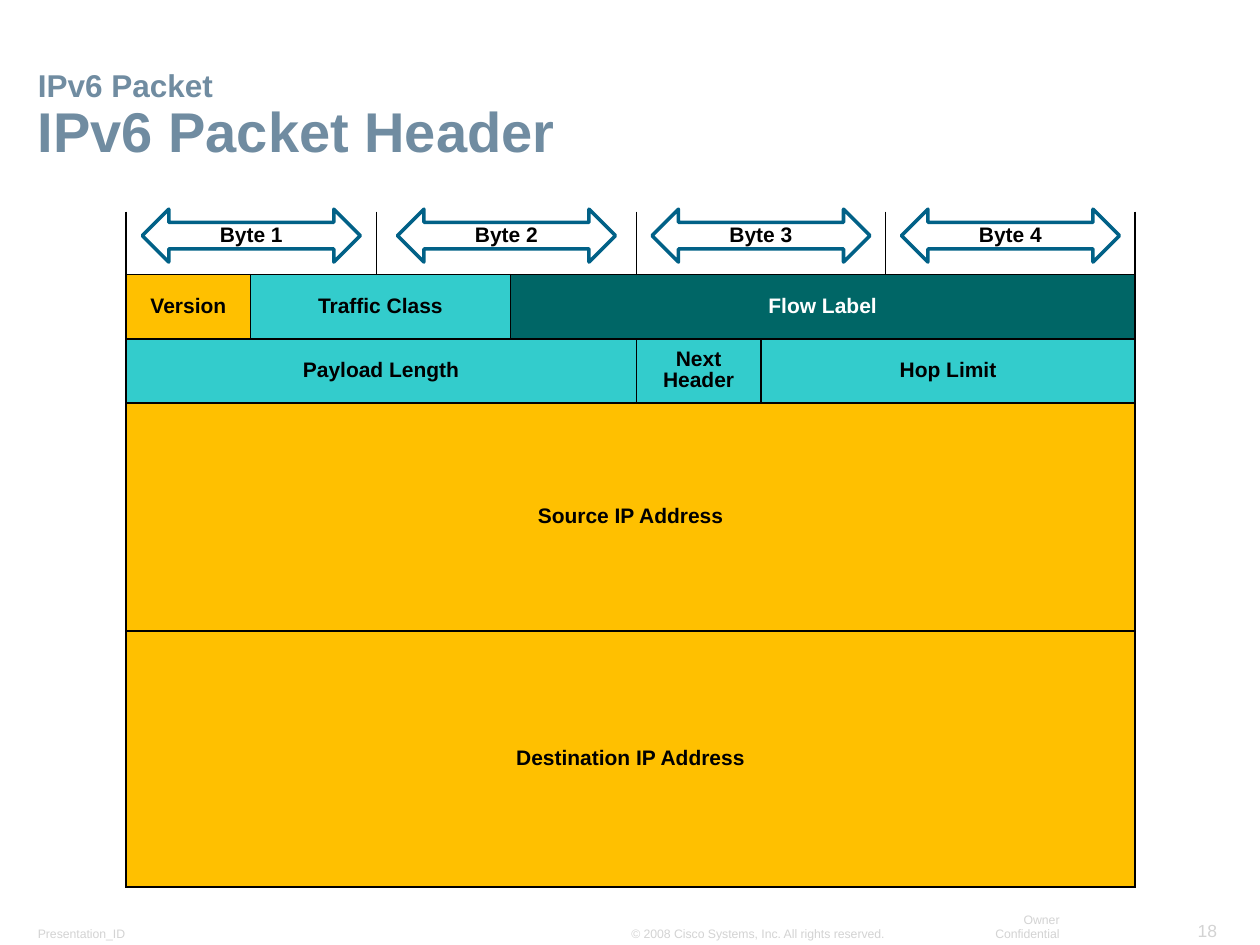
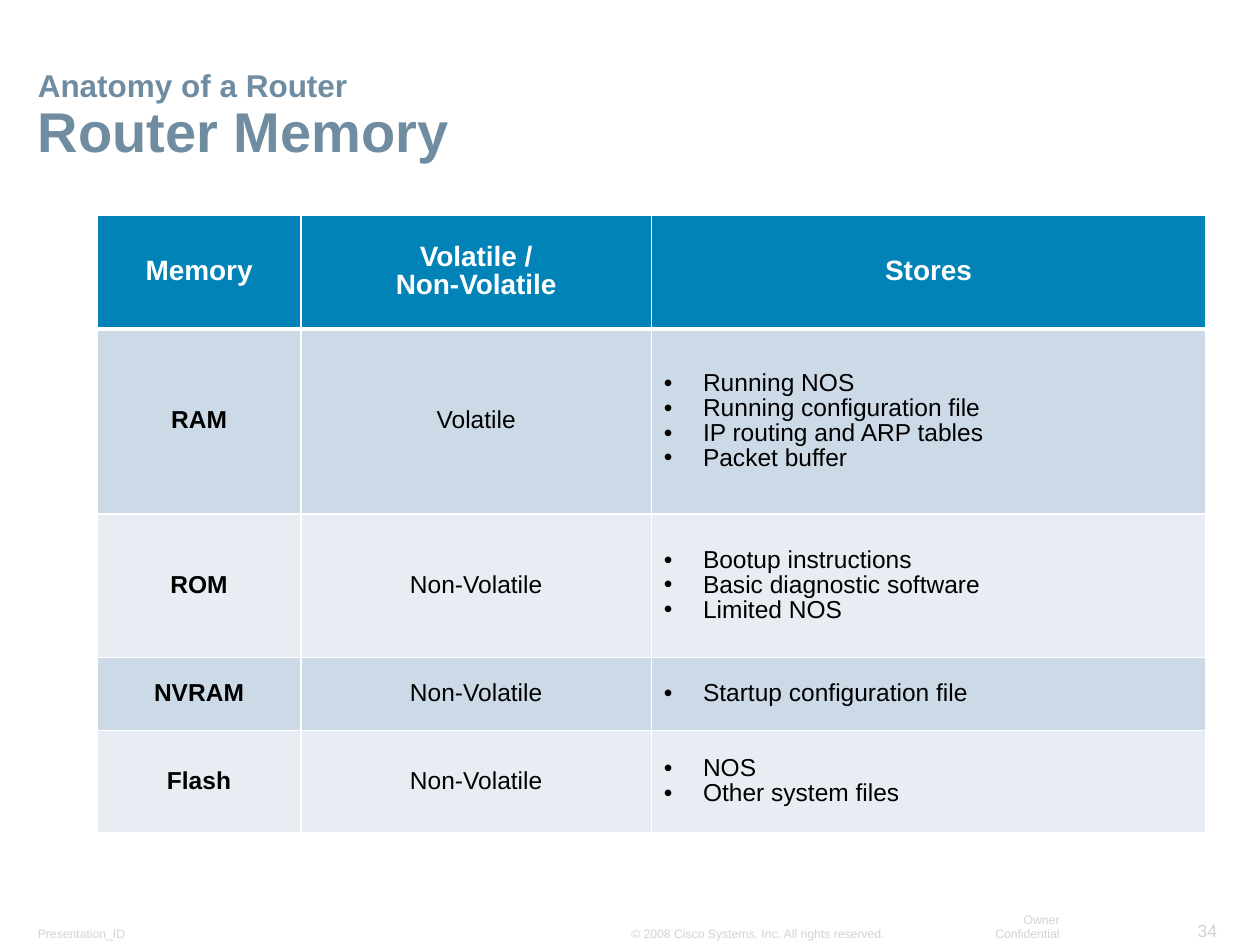
"""Build two router lesson slides: the IPv6 packet header and router memory."""
from copy import deepcopy
from itertools import accumulate

from lxml.etree import SubElement
from pptx import Presentation
from pptx.dml.color import RGBColor as RGB
from pptx.enum.shapes import MSO_SHAPE as SHAPE
from pptx.enum.text import MSO_ANCHOR as ANCHOR, MSO_AUTO_SIZE as AUTO_SIZE, PP_ALIGN as ALIGN
from pptx.oxml.ns import qn
from pptx.util import Inches, Pt

COLORS = {
    "title": "708CA1", "footer": "D3D3D3", "black": "000000", "white": "FFFFFF",
    "arrow": "016187", "amber": "FFC000", "aqua": "33CCCC", "teal": "006666",
    "header": "0183B7", "dark band": "CCD9E6", "light band": "E7EDF3",
}
TITLES = [("IPv6 Packet", "IPv6 Packet Header", "18"),
          ("Anatomy of a Router", "Router Memory", "34")]
FOOTERS = [
    ("Presentation_ID", 0.21, 7.3, 1.05, 0.21, 7, ALIGN.LEFT),
    ("© 2008 Cisco Systems, Inc. All rights reserved.", 4.92, 7.3, 2.21, 0.21, 7, ALIGN.LEFT),
    ("Owner Confidential", 7.54, 7.3, 0.96, 0.21, 7, ALIGN.RIGHT),
]


def write(frame, lines, size, color, bold=False, align=ALIGN.CENTER, spacing=0.9, bullet=None):
    for index, line in enumerate(lines):
        paragraph = frame.paragraphs[0] if index == 0 else frame.add_paragraph()
        if bullet:
            properties = paragraph._p.get_or_add_pPr()
            properties.set("marL", str(Inches(0.31)))
            properties.set("indent", str(-Inches(0.31)))
            SubElement(properties, qn("a:buFont")).set("typeface", "Arial")
            SubElement(properties, qn("a:buChar")).set("char", bullet)
        paragraph.alignment = align
        paragraph.line_spacing = spacing
        run = paragraph.add_run()
        run.text = line
        for name, value in {"name": "Arial", "size": Pt(size), "bold": bold}.items():
            setattr(run.font, name, value)
        run.font.color.rgb = RGB.from_string(COLORS[color])


def style_cell(cell, fill, border, widths):
    cell.vertical_anchor = ANCHOR.MIDDLE
    if fill:
        cell.fill.solid()
        cell.fill.fore_color.rgb = RGB.from_string(COLORS[fill])
    else:
        cell.fill.background()
    properties = cell._tc.get_or_add_tcPr()
    for index, (side, width) in enumerate(zip("LRTB", widths)):
        line = SubElement(properties, qn(f"a:ln{side}"), w=str(Pt(width)))
        if width:
            paint = SubElement(line, qn("a:solidFill"))
            SubElement(paint, qn("a:srgbClr"), val=COLORS[border])
        else:
            SubElement(line, qn("a:noFill"))
        properties.insert(index, line)


presentation = Presentation()
presentation.slide_width = Inches(10)
presentation.slide_height = Inches(7.5)

slides = []
for topic, heading, number in TITLES:
    slide = presentation.slides.add_slide(presentation.slide_layouts[5])
    slides.append(slide)
    title = slide.shapes.title
    title_format = {"left": 0.21, "top": 0.43, "width": 9.59, "height": 0.92}
    for name, value in title_format.items():
        setattr(title, name, Inches(value))
    frame = title.text_frame
    frame.auto_size = AUTO_SIZE.NONE
    frame.vertical_anchor = ANCHOR.BOTTOM
    frame.margin_left = frame.margin_right = Inches(0.09)
    frame.margin_top = frame.margin_bottom = Inches(0.04)
    write(frame, [topic], 18, "title", True, ALIGN.LEFT)
    paragraph = frame.paragraphs[0]
    topic_run = paragraph.runs[0]
    paragraph.add_line_break()
    paragraph._p[-1].append(deepcopy(topic_run._r.rPr))
    heading_run = paragraph.add_run()
    heading_run.text = heading
    heading_run._r.insert(0, deepcopy(topic_run._r.rPr))
    heading_run.font.size = Pt(32)

    page_number = (number, 9.4, 7.25, 0.35, 0.26, 10, ALIGN.RIGHT)
    for text, left, top, width, height, size, align in FOOTERS + [page_number]:
        box = slide.shapes.add_textbox(*map(Inches, (left, top, width, height)))
        frame = box.text_frame
        frame.word_wrap = False
        frame.vertical_anchor = ANCHOR.BOTTOM
        frame.margin_left = frame.margin_right = Inches(0.09)
        frame.margin_top = frame.margin_bottom = Inches(0.04)
        write(frame, [text], size, "footer", align=align, spacing=1.0)

packet_slide, memory_slide = slides

packet_columns = [0.99, 1, 1.06, 1, 0.99, 0.99, 1.98]
packet_rows = [0.5, 0.51, 0.51, 1.81, 2.03]
packet_fields = [
    [("", None, 2), ("", None, 2), ("", None, 2), ("", None, 1)],
    [("Version", "amber", 1), ("Traffic Class", "aqua", 2), ("Flow Label", "teal", 4)],
    [("Payload Length", "aqua", 4), ("Next Header", "aqua", 1), ("Hop Limit", "aqua", 2)],
    [("Source IP Address", "amber", 7)],
    [("Destination IP Address", "amber", 7)],
]
packet_table = packet_slide.shapes.add_table(
    5, 7, Inches(1), Inches(1.68), Inches(sum(packet_columns)), Inches(sum(packet_rows))).table

memory_columns = [1.62, 2.78, 4.4]
memory_rows = [0.9, 1.47, 1.14, 0.58, 0.81]
memory_kinds = [
    ("RAM", "Volatile", ["Running NOS", "Running configuration file",
                         "IP routing and ARP tables", "Packet buffer"]),
    ("ROM", "Non-Volatile", ["Bootup instructions", "Basic diagnostic software", "Limited NOS"]),
    ("NVRAM", "Non-Volatile", ["Startup configuration file"]),
    ("Flash", "Non-Volatile", ["NOS", "Other system files"]),
]
memory_table = memory_slide.shapes.add_table(
    5, 3, Inches(0.77), Inches(1.71), Inches(sum(memory_columns)), Inches(sum(memory_rows))).table

for table, columns, rows in [(packet_table, packet_columns, packet_rows),
                             (memory_table, memory_columns, memory_rows)]:
    table.first_row = table.horz_banding = False
    for column, width in zip(table.columns, columns):
        column.width = Inches(width)
    for row, height in zip(table.rows, rows):
        row.height = Inches(height)

for row, fields in enumerate(packet_fields):
    start = 0
    for text, fill, span in fields:
        for column in range(start, start + span):
            style_cell(packet_table.cell(row, column), fill, "black", (1, 1, min(row, 1), 1))
        cell = packet_table.cell(row, start)
        if span > 1:
            cell.merge(packet_table.cell(row, start + span - 1))
        if text:
            write(cell.text_frame, [text], 12, "white" if fill == "teal" else "black", True)
        start += span

edges = [1 + offset for offset in accumulate(packet_columns, initial=0)]
byte_edges = edges[:7:2] + edges[-1:]
arrow_width = 1.73
for byte, (left, right) in enumerate(zip(byte_edges, byte_edges[1:]), 1):
    arrow_left = (left + right - arrow_width) / 2
    arrow = packet_slide.shapes.add_shape(
        SHAPE.LEFT_RIGHT_ARROW, *map(Inches, (arrow_left, 1.66, arrow_width, 0.42)))
    arrow.shadow.inherit = False
    arrow.fill.background()
    arrow.line.color.rgb = RGB.from_string(COLORS["arrow"])
    arrow.line.width = Pt(2)
    arrow.text_frame.vertical_anchor = ANCHOR.MIDDLE
    write(arrow.text_frame, [f"Byte {byte}"], 12, "black", True)

for column, lines in enumerate([["Memory"], ["Volatile /", "Non-Volatile"], ["Stores"]]):
    cell = memory_table.cell(0, column)
    style_cell(cell, "header", "white", (1, 1, 1, 3))
    write(cell.text_frame, lines, 16, "white", True)

for row, (memory, volatility, contents) in enumerate(memory_kinds, 1):
    cells = [memory_table.cell(row, column) for column in range(3)]
    for cell in cells:
        style_cell(cell, "dark band" if row % 2 else "light band", "white",
                   (1, 1, 3 if row == 1 else 1, 1))
    write(cells[0].text_frame, [memory], 14, "black", True)
    write(cells[1].text_frame, [volatility], 14, "black")
    write(cells[2].text_frame, contents, 14, "black", align=ALIGN.LEFT, bullet="•")

presentation.save("out.pptx")
